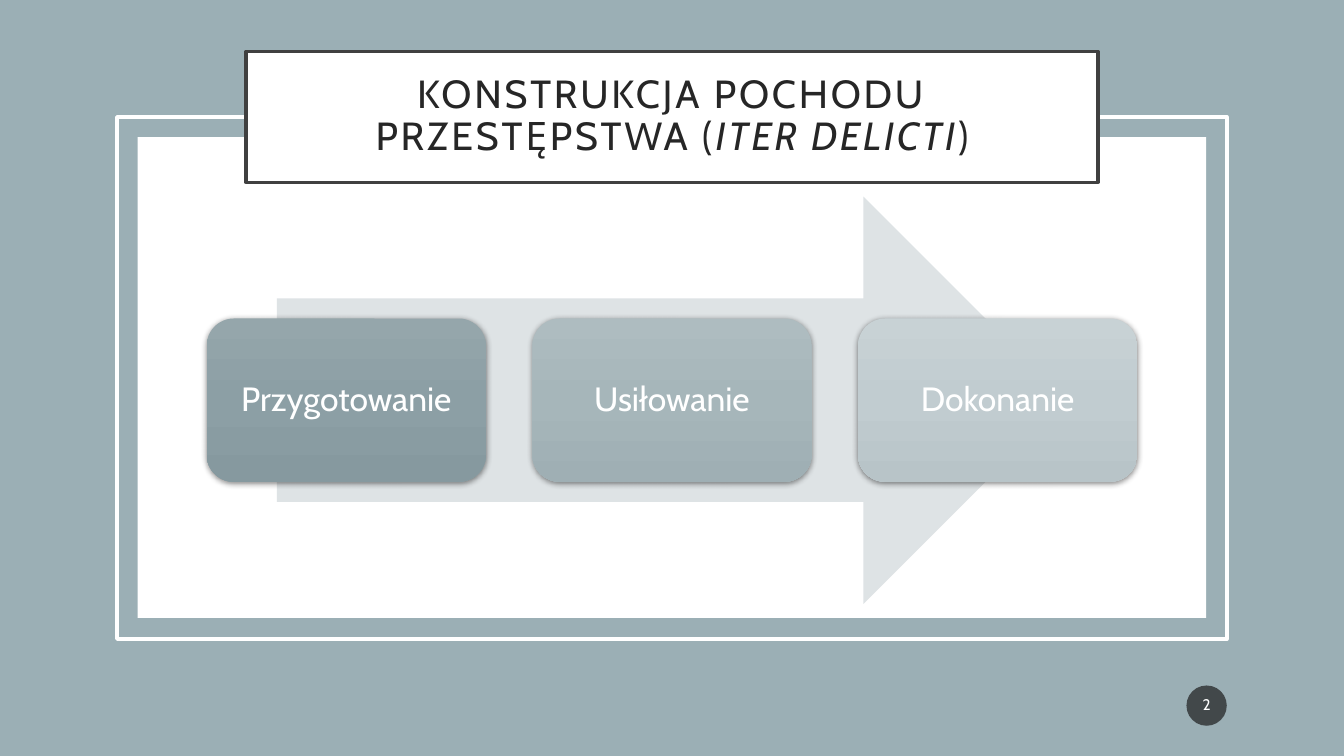
import copy
from dataclasses import dataclass
from typing import Optional

import lxml.etree
import pptx
import pptx.dml.color
import pptx.enum.dml
import pptx.enum.shapes
import pptx.enum.text
import pptx.oxml.ns
import pptx.shapes.autoshape
import pptx.slide
import pptx.text.text
import pptx.util

RGBColor = pptx.dml.color.RGBColor
Shape = pptx.shapes.autoshape.Shape
Preset = pptx.enum.shapes.MSO_SHAPE
qn = pptx.oxml.ns.qn

SLIDE_WIDTH = pptx.util.Inches(13.33)
SLIDE_HEIGHT = pptx.util.Inches(7.5)
FONT = "Cabin"

WHITE = RGBColor(0xFF, 0xFF, 0xFF)
BLACK = RGBColor(0x00, 0x00, 0x00)
BACKDROP = RGBColor(0x9B, 0xAF, 0xB5)
TITLE_BORDER = RGBColor(0x40, 0x40, 0x40)
TITLE_TEXT = RGBColor(0x26, 0x26, 0x26)
ARROW_FILL = RGBColor(0xDE, 0xE3, 0xE5)
BADGE_FILL = RGBColor(0x1D, 0x1D, 0x1D)


@dataclass(frozen=True)
class Box:
    """A place on the slide, in percent of its width and height."""
    left: float
    top: float
    width: float
    height: float


@dataclass(frozen=True)
class Stage:
    label: str
    gradient: tuple[RGBColor, RGBColor, RGBColor]


STAGES = [
    Stage("Przygotowanie", (RGBColor(0x95, 0xA6, 0xAB), RGBColor(0x8C, 0x9F, 0xA5),
                            RGBColor(0x86, 0x99, 0x9F))),
    Stage("Usiłowanie", (RGBColor(0xAE, 0xBC, 0xC0), RGBColor(0xA6, 0xB6, 0xBA),
                         RGBColor(0x9F, 0xAF, 0xB4))),
    Stage("Dokonanie", (RGBColor(0xC8, 0xD2, 0xD5), RGBColor(0xC1, 0xCC, 0xD0),
                        RGBColor(0xB8, 0xC4, 0xC8))),
]
STAGE_WIDTH = 20.78
STAGE_PITCH = 24.23


def centred(top: float, width: float, height: float) -> Box:
    return Box((100 - width) / 2, top, width, height)


def add_panel(slide: pptx.slide.Slide, preset: Preset, box: Box,
              fill: Optional[RGBColor] = None, line: Optional[RGBColor] = None) -> Shape:
    panel = slide.shapes.add_shape(
        preset,
        round(SLIDE_WIDTH * box.left / 100), round(SLIDE_HEIGHT * box.top / 100),
        round(SLIDE_WIDTH * box.width / 100), round(SLIDE_HEIGHT * box.height / 100))
    panel.shadow.inherit = False
    if fill is None:
        panel.fill.background()
    else:
        panel.fill.solid()
        panel.fill.fore_color.rgb = fill
    if line is None:
        panel.line.fill.background()
    else:
        panel.line.color.rgb = line
        panel.line.width = pptx.util.Pt(2.5)
    return panel


def style_text(panel: Shape, size: float, color: RGBColor, inset_x: float,
               inset_y: float) -> pptx.text.text._Paragraph:
    """Centre the panel's text and return its paragraph; insets are in inches."""
    frame = panel.text_frame
    frame.word_wrap = True
    frame.vertical_anchor = pptx.enum.text.MSO_ANCHOR.MIDDLE
    frame.margin_left = frame.margin_right = pptx.util.Inches(inset_x)
    frame.margin_top = frame.margin_bottom = pptx.util.Inches(inset_y)
    paragraph = frame.paragraphs[0]
    paragraph.alignment = pptx.enum.text.PP_ALIGN.CENTER
    paragraph.line_spacing = 0.9
    paragraph.font.name = FONT
    paragraph.font.size = pptx.util.Pt(size)
    paragraph.font.color.rgb = color
    return paragraph


def add_alpha(color: lxml.etree._Element, percent: int) -> None:
    lxml.etree.SubElement(color, qn("a:alpha"), val=str(percent * 1000))


def fill_downwards(panel: Shape, colors: tuple[RGBColor, RGBColor, RGBColor]) -> None:
    panel.fill.gradient()
    panel.fill.gradient_angle = 270
    stop_list = panel.element.spPr.find(".//" + qn("a:gsLst"))
    stop_list.insert(1, copy.deepcopy(stop_list[0]))
    for stop, color, position in zip(panel.fill.gradient_stops, colors, (0, 0.5, 1)):
        stop.color.rgb = color
        stop.position = position


def cast_shadow(panel: Shape) -> None:
    effects = panel.element.spPr.find(qn("a:effectLst"))
    shadow = lxml.etree.SubElement(
        effects, qn("a:outerShdw"), blurRad=str(pptx.util.Pt(4.4)),
        dist=str(pptx.util.Pt(1.2)), dir=str(90 * 60000), rotWithShape="0")
    add_alpha(lxml.etree.SubElement(shadow, qn("a:srgbClr"), val=str(BLACK)), 45)


def add_title(slide: pptx.slide.Slide) -> None:
    title = add_panel(slide, Preset.RECTANGLE, centred(6.8, 63.38, 17.33),
                      WHITE, TITLE_BORDER)
    paragraph = style_text(title, 28, TITLE_TEXT, 0.2, 0.2)
    for words, italic in (("KONSTRUKCJA POCHODU PRZESTĘPSTWA (", False),
                          ("ITER DELICTI", True), (")", False)):
        run = paragraph.add_run()
        run.text = words
        run.font.italic = italic
        run.font._element.set("spc", "200")


def add_stage(slide: pptx.slide.Slide, stage: Stage, index: int) -> None:
    first_left = (100 - STAGE_WIDTH - STAGE_PITCH * (len(STAGES) - 1)) / 2
    box = Box(first_left + index * STAGE_PITCH, 42.13, STAGE_WIDTH, 21.6)
    card = add_panel(slide, Preset.ROUNDED_RECTANGLE, box)
    fill_downwards(card, stage.gradient)
    cast_shadow(card)
    style_text(card, 24, WHITE, 0.1, 0.1).add_run().text = stage.label


def add_page_badge(slide: pptx.slide.Slide, number: int) -> None:
    badge = add_panel(slide, Preset.OVAL, Box(88.28, 90.67, 3, 5.33), BADGE_FILL)
    add_alpha(badge.element.spPr.find(".//" + qn("a:srgbClr")), 70)
    style_text(badge, 11, WHITE, 0.02, 0.05).add_run().text = str(number)


def main() -> None:
    deck = pptx.Presentation()
    deck.slide_width = SLIDE_WIDTH
    deck.slide_height = SLIDE_HEIGHT
    slide = deck.slides.add_slide(deck.slide_layouts[6])
    slide.background.fill.solid()
    slide.background.fill.fore_color.rgb = BACKDROP

    add_panel(slide, Preset.RECTANGLE, centred(18.13, 79.5, 63.6), WHITE)
    add_panel(slide, Preset.RECTANGLE, centred(15.47, 82.58, 69.07), line=WHITE)
    add_title(slide)
    add_panel(slide, Preset.RIGHT_ARROW, centred(26, 58.8, 53.87), ARROW_FILL)
    for index, stage in enumerate(STAGES):
        add_stage(slide, stage, index)
    add_page_badge(slide, 2)
    deck.save("out.pptx")


if __name__ == "__main__":
    main()
